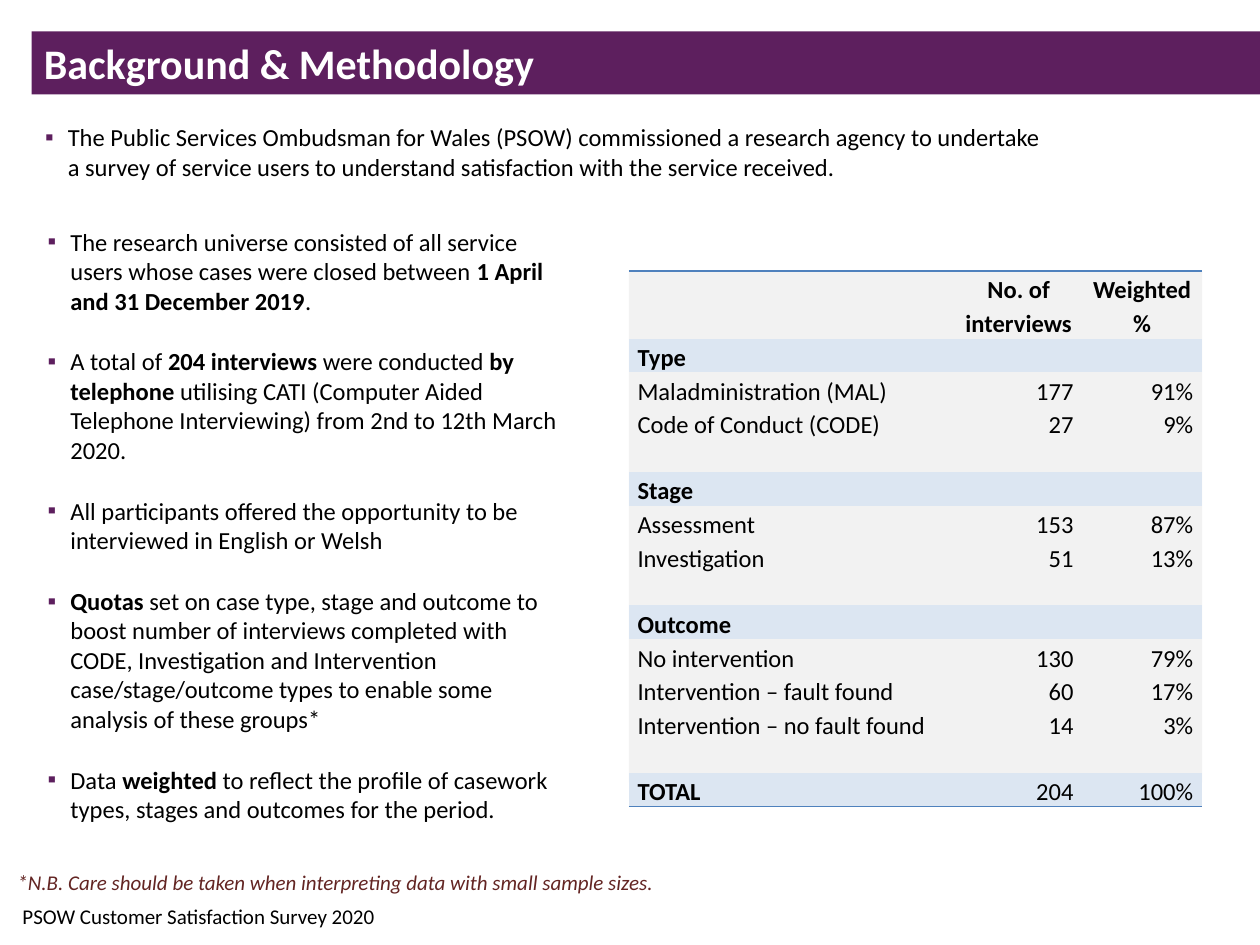
from lxml import etree
from pptx import Presentation
from pptx.dml.color import RGBColor
from pptx.enum.shapes import MSO_SHAPE
from pptx.enum.text import MSO_ANCHOR, PP_ALIGN
from pptx.oxml.ns import qn
from pptx.util import Inches, Pt

RECTANGLE = MSO_SHAPE.RECTANGLE
TOP, MIDDLE, BOTTOM = MSO_ANCHOR.TOP, MSO_ANCHOR.MIDDLE, MSO_ANCHOR.BOTTOM
LEFT, CENTER, RIGHT = PP_ALIGN.LEFT, PP_ALIGN.CENTER, PP_ALIGN.RIGHT

PURPLE = RGBColor(0x5D, 0x1F, 0x5E)
WHITE = RGBColor(0xFF, 0xFF, 0xFF)
BLACK = RGBColor(0x00, 0x00, 0x00)
MAROON = RGBColor(0x63, 0x25, 0x23)
GREY = RGBColor(0xF2, 0xF2, 0xF2)
PALE_BLUE = RGBColor(0xDC, 0xE6, 0xF2)
RULE_BLUE = RGBColor(0x4F, 0x81, 0xBD)

FONT = "Calibri"
WIDTH, HEIGHT = 10, 7.5
MARGIN = WIDTH / 40
RESULTS_AREA = (4.99, 2.15, 4.55, 4.06)
COLUMN_WIDTHS = (2.59, 1.01, 0.95)

INTRODUCTION = [
    "The Public Services Ombudsman for Wales (PSOW) commissioned a research agency "
    "to undertake a survey of service users to understand satisfaction with the "
    "service received.",
]
METHOD = [
    "The research universe consisted of all service users whose cases were closed "
    "between **1 April and 31 December 2019**.",
    "A total of **204 interviews **were conducted **by telephone **utilising CATI "
    "(Computer Aided Telephone Interviewing) from 2nd to 12th March 2020.",
    "All participants offered the opportunity to be interviewed in English or Welsh",
    "**Quotas** set on case type, stage and outcome to boost number of interviews "
    "completed with CODE, Investigation and Intervention case/stage/outcome types "
    "to enable some analysis of these groups*",
    "Data **weighted** to reflect the profile of casework types, stages and outcomes "
    "for the period.",
]
HEADER = ("", "No. of interviews", "Weighted %")
SECTIONS = {
    "Type": [("Maladministration (MAL)", "177", "91%"),
             ("Code of Conduct (CODE)", "27", "9%")],
    "Stage": [("Assessment", "153", "87%"),
              ("Investigation", "51", "13%")],
    "Outcome": [("No intervention", "130", "79%"),
                ("Intervention – fault found", "60", "17%"),
                ("Intervention – no fault found", "14", "3%")],
}
TOTAL = ("TOTAL", "204", "100%")


def inches(lengths):
    """Turn a sequence of inch values into lengths."""
    return [Inches(length) for length in lengths]


def write(paragraph, text, *, size=14, color=BLACK, bold=False, italic=False,
          align=LEFT, spacing=None):
    """Write text in a paragraph, with ** switching bold on and off."""
    paragraph.alignment = align
    if spacing:
        paragraph.line_spacing = spacing
    for index, part in enumerate(text.split("**")):
        if part:
            run = paragraph.add_run()
            run.text = part
            font = run.font
            font.name, font.size = FONT, Pt(size)
            font.bold, font.italic = bold or index % 2 == 1, italic
            font.color.rgb = color
    if not text:
        etree.SubElement(paragraph._p, qn("a:endParaRPr"), sz=str(size * 100))


def add_bullet(paragraph):
    """Give a paragraph a hanging purple square bullet."""
    properties = paragraph._p.get_or_add_pPr()
    properties.set("marL", str(Inches(0.19)))
    properties.set("indent", str(Inches(-0.18)))
    bullet_color = etree.SubElement(properties, qn("a:buClr"))
    etree.SubElement(bullet_color, qn("a:srgbClr"), val=str(PURPLE))
    etree.SubElement(properties, qn("a:buFont"), typeface="Arial")
    etree.SubElement(properties, qn("a:buChar"), char="▪")


def add_text(slide, area, text, *, anchor=TOP, **style):
    """Add a wrapping text box with one paragraph."""
    frame = slide.shapes.add_textbox(*inches(area)).text_frame
    frame.word_wrap = True
    frame.vertical_anchor = anchor
    write(frame.paragraphs[0], text, **style)


def add_bullets(slide, area, points):
    """Add a text box with one bullet for each point."""
    frame = slide.shapes.add_textbox(*inches(area)).text_frame
    frame.word_wrap = True
    for index, point in enumerate(points):
        paragraph = frame.add_paragraph() if index else frame.paragraphs[0]
        paragraph.space_before = Pt(12 if index else 0)
        paragraph.space_after = Pt(6)
        add_bullet(paragraph)
        write(paragraph, point)


def add_panel(slide, area, color):
    """Add a plain filled rectangle."""
    panel = slide.shapes.add_shape(RECTANGLE, *inches(area))
    panel.shadow.inherit = False
    panel.fill.solid()
    panel.fill.fore_color.rgb = color
    panel.line.fill.background()
    return panel


def add_title(slide, text):
    """Add the title band that runs to the right edge."""
    band = add_panel(slide, (MARGIN, MARGIN, WIDTH - MARGIN, 0.5), PURPLE)
    band.text_frame.vertical_anchor = MIDDLE
    write(band.text_frame.paragraphs[0], text, size=24, color=WHITE, bold=True)


def rule_cell(cell, ruled_edges):
    """Draw the given edges of a cell and clear the others."""
    properties = cell._tc.get_or_add_tcPr()
    for edge in "LRTB":
        line = etree.SubElement(properties, qn(f"a:ln{edge}"), w=str(Pt(1)))
        if edge in ruled_edges:
            fill = etree.SubElement(line, qn("a:solidFill"))
            etree.SubElement(fill, qn("a:srgbClr"), val=str(RULE_BLUE))
        else:
            etree.SubElement(line, qn("a:noFill"))


def fill_cell(cell, text, *, ruled_edges="", color=None, **style):
    """Set the borders, fill, margins and text of a cell."""
    rule_cell(cell, ruled_edges)
    if color:
        cell.fill.solid()
        cell.fill.fore_color.rgb = color
    else:
        cell.fill.background()
    cell.margin_left = cell.margin_right = Inches(0.07)
    cell.margin_top = cell.margin_bottom = 0
    write(cell.text_frame.paragraphs[0], text, spacing=1.15, **style)


def result_rows():
    """List each row's texts with its kind."""
    rows = [(HEADER, "header")]
    for heading, results in SECTIONS.items():
        rows.append(((heading, "", ""), "heading"))
        rows += [(result, "result") for result in results]
        rows.append((("", "", ""), "gap"))
    return rows + [(TOTAL, "total")]


def add_results(slide):
    """Add the table of interviews by type, stage and outcome."""
    rows = result_rows()
    table = slide.shapes.add_table(
        len(rows), len(COLUMN_WIDTHS), *inches(RESULTS_AREA)).table
    table.first_row = table.horz_banding = False
    for column, width in zip(table.columns, COLUMN_WIDTHS):
        column.width = Inches(width)
    line_height = RESULTS_AREA[3] / (len(rows) + 1)
    edges = {"header": "TB", "total": "B"}
    for r, (texts, kind) in enumerate(rows):
        table.rows[r].height = Inches(line_height * (2 if kind == "header" else 1))
        for c, text in enumerate(texts):
            value_align = CENTER if kind == "header" else RIGHT
            fill_cell(
                table.cell(r, c), text,
                ruled_edges=edges.get(kind, ""),
                color=PALE_BLUE if kind in ("heading", "total") else None,
                bold=kind in ("header", "heading") or (kind == "total" and c == 0),
                align=value_align if c else LEFT)


def main():
    """Build and save the slide."""
    deck = Presentation()
    deck.slide_width, deck.slide_height = inches((WIDTH, HEIGHT))
    slide = deck.slides.add_slide(deck.slide_layouts[6])
    add_text(slide, (0.08, 6.92, 5.25, 0.5), "PSOW Customer Satisfaction Survey 2020",
             size=12, anchor=BOTTOM)
    add_panel(slide, RESULTS_AREA, GREY)
    add_title(slide, "Background & Methodology")
    add_bullets(slide, (0.27, 1.75, 4.31, 4.88), METHOD)
    add_results(slide)
    add_text(slide, (0.04, 6.85, 5.76, 0.3),
             "*N.B. Care should be taken when interpreting data with small sample sizes.",
             size=12, color=MAROON, italic=True)
    add_bullets(slide, (MARGIN, 0.92, 8.17, 0.57), INTRODUCTION)
    deck.save("out.pptx")


if __name__ == "__main__":
    main()
